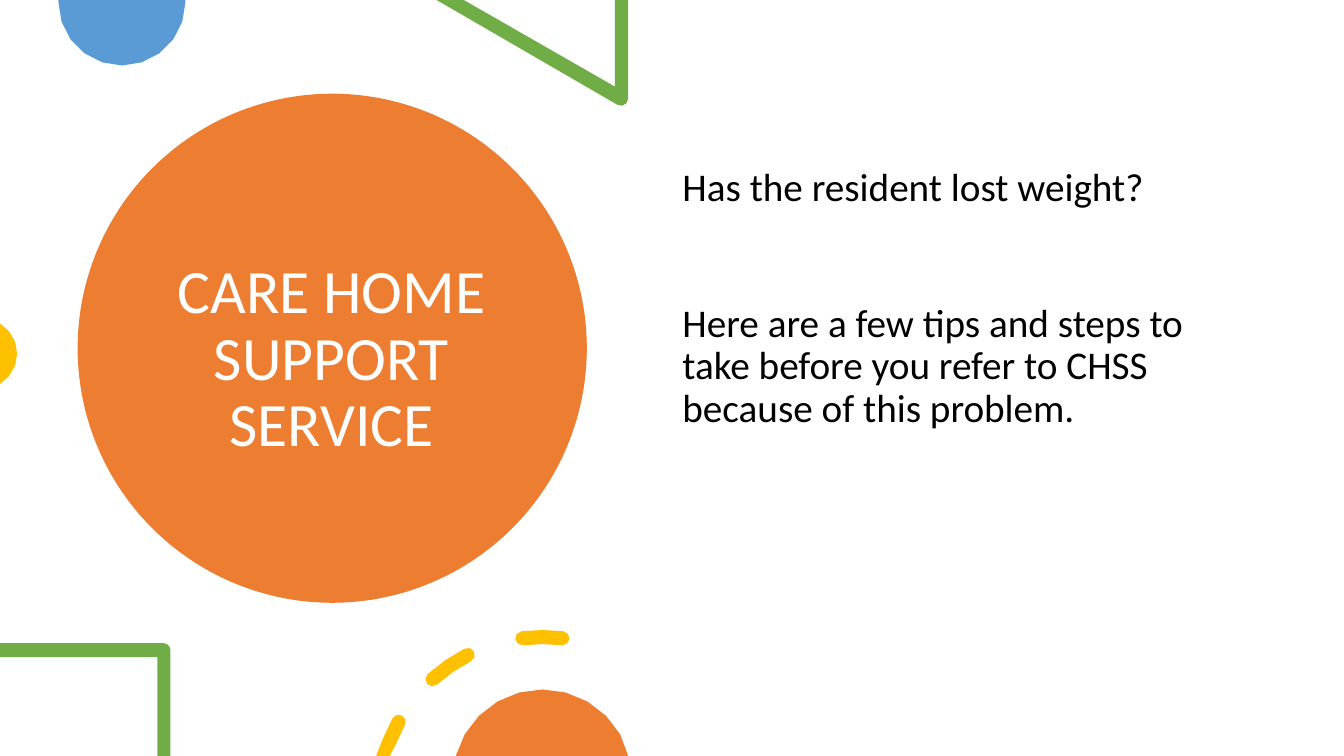
from dataclasses import dataclass
from math import cos, radians, sin

from pptx import Presentation
from pptx import util as u
from pptx.dml.color import RGBColor
from pptx.enum import shapes, text

PX = 9144  # 100 px to the inch
WIDE, HIGH = 1333, 750


@dataclass(frozen=True)
class Theme:
    font: str = "Calibri"
    title: int = 44
    body: int = 28
    lead: float = 0.9
    gap: int = 67
    white: str = "FFFFFF"
    black: str = "000000"
    orange: str = "ED7D31"
    blue: str = "5B9BD5"
    green: str = "70AD47"
    gold: str = "FFC000"


T = Theme()


def paint(shape, color):
    shape.shadow.inherit = False
    shape.fill.solid()
    shape.fill.fore_color.rgb = RGBColor.from_string(color)
    shape.line.fill.background()


def arc(x, y, r, start, end, steps):
    """Points on a circle, angles in degrees, clockwise from the right."""
    turns = [radians(start + (end - start) * i / steps) for i in range(steps + 1)]
    return [(x + r * cos(a), y + r * sin(a)) for a in turns]


def dash(x, y, r, half, start, end):
    """A thick piece of a ring with round ends."""
    head, tail = arc(x, y, r, start, end, 1)
    return (arc(x, y, r + half, start, end, 2)
            + arc(*tail, half, end, end + 180, 4)[1:-1]
            + arc(x, y, r - half, end, start, 2)
            + arc(*head, half, start + 180, start + 360, 4)[1:-1])


def cut(slide, box, color, *rings):
    """Draw closed outlines, trimmed to the box."""
    left, top, wide, high = box

    def place(point):
        x, y = (min(max(p, 0), most) for p, most in zip(point, (wide, high)))
        return round((left + x) * PX), round((top + y) * PX)

    pen = None
    for ring in rings:
        first, *rest = map(place, ring)
        if pen is None:
            pen = slide.shapes.build_freeform(*first, scale=1.0)
        else:
            pen.move_to(*first)
        pen.add_line_segments(rest, close=True)
    paint(pen.convert_to_shape(), color)


def write(slide, box, lines, size, color, align, anchor, inset=5):
    frame = slide.shapes.add_textbox(*(n * PX for n in box)).text_frame
    frame.word_wrap = True
    frame.vertical_anchor = anchor
    frame.margin_top = inset * PX
    for i, line in enumerate(lines):
        para = frame.paragraphs[0] if i == 0 else frame.add_paragraph()
        para.text = line
        para.alignment = align
        para.line_spacing = T.lead
        para.space_before = u.Pt(T.gap if i else 0)
        para.space_after = u.Pt(0)
        para.font.name = T.font
        para.font.size = u.Pt(size)
        para.font.color.rgb = RGBColor.from_string(color)


def title(slide, box):
    left, top, wide, high = box
    disc = slide.shapes.add_shape(shapes.MSO_SHAPE.OVAL, *(n * PX for n in box))
    paint(disc, T.orange)
    write(slide, (left + 75, top + 42, 354, 445), ["CARE HOME SUPPORT SERVICE"],
          T.title, T.white, text.PP_ALIGN.CENTER, text.MSO_ANCHOR.MIDDLE)


def trim(slide, box):
    high = box[3]
    # Top edge: half disc and triangle corner
    cut(slide, box, T.blue, arc(121, 2, 63, 0, 180, 10) + [(58, 0), (184, 0)])
    cut(slide, box, T.green, [(433, 0), (460, 0), (610, 86), (610, 0), (623, 0)]
        + arc(616, 98, 7, 0, 120, 3))
    # Left edge: sliver of a disc
    cut(slide, box, T.gold, arc(-18, 351, 35, -59, 59, 6))
    # Bottom edge: square corner, dashed ring and disc
    cut(slide, box, T.green, [(0, 638)] + arc(162, 645, 7, -90, 0, 3)
        + [(169, high), (156, high), (156, 652), (0, 652)])
    spans = [(194, 209), (228, 243), (263, 277)]
    cut(slide, box, T.gold, *(dash(538, 795, 163, 7, *span) for span in spans))
    cut(slide, box, T.orange, arc(538, 773, 89, 195, 345, 10))


def body(slide, box):
    write(slide, box,
          ["Has the resident lost weight?",
           "Here are a few tips and steps to take before you refer to CHSS "
           "because of this problem."],
          T.body, T.black, text.PP_ALIGN.LEFT, text.MSO_ANCHOR.TOP, inset=76)


def main():
    deck = Presentation()
    deck.slide_width, deck.slide_height = WIDE * PX, HIGH * PX
    slide = deck.slides.add_slide(deck.slide_layouts[6])
    title(slide, (77, 93, 505, 505))
    trim(slide, (0, 0, 623, HIGH))
    body(slide, (667, 90, 575, 535))
    deck.save("out.pptx")


if __name__ == "__main__":
    main()
